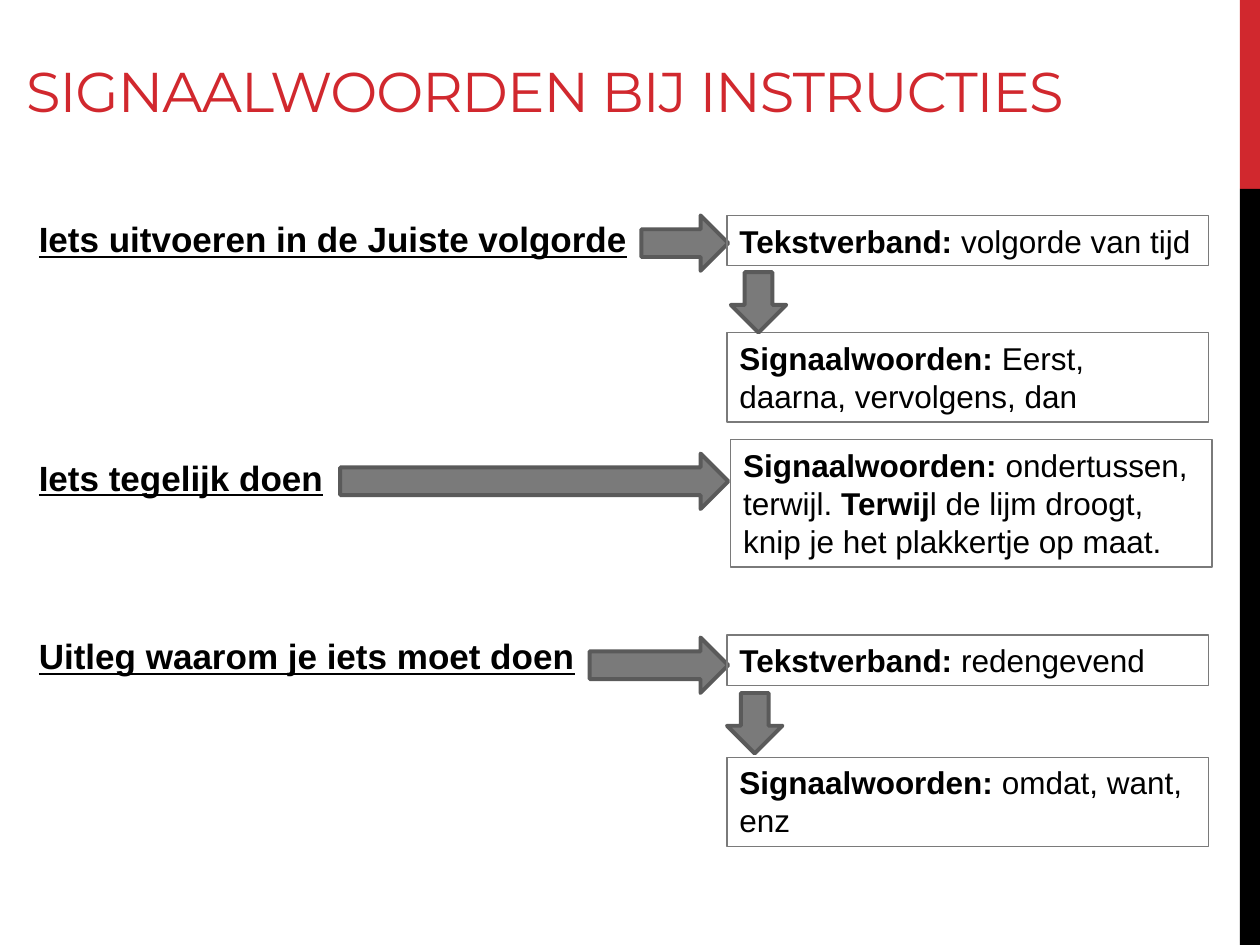
from dataclasses import dataclass

from pptx import Presentation
from pptx.dml.color import RGBColor
from pptx.enum import shapes, text
from pptx.util import Inches, Pt


@dataclass(frozen=True)
class Theme:
    red: RGBColor = RGBColor(0xD1, 0x28, 0x2E)
    black: RGBColor = RGBColor(0, 0, 0)
    gray: RGBColor = RGBColor(0x7A, 0x7A, 0x7A)
    outline: RGBColor = RGBColor(0x5A, 0x5A, 0x5A)
    title_font: str = "Montserrat"
    body_font: str = "Arial"
    title_size: Pt = Pt(32)
    goal_size: Pt = Pt(20)
    card_size: Pt = Pt(18)


THEME = Theme()
SHAPE = shapes.MSO_SHAPE
GOAL_LEFT = 0.21
CARD_LEFT, CARD_WIDTH = 5.77, 3.82
ARROW_THICKNESS, DOWN_LENGTH = 0.44, 0.48


def inches(box):
    return [Inches(length) for length in box]


def style(font, face, size, color):
    font.name, font.size = face, size
    font.color.rgb = color


def add_shape(slide, kind, box, fill=None, line=None, line_width=0.75):
    shape = slide.shapes.add_shape(kind, *inches(box))
    shape.shadow.inherit = False
    if fill is None:
        shape.fill.background()
    else:
        shape.fill.solid()
        shape.fill.fore_color.rgb = fill
    if line is None:
        shape.line.fill.background()
    else:
        shape.line.color.rgb = line
        shape.line.width = Pt(line_width)
    return shape


def add_side_bar(slide, box):
    left, top, width, height = box
    accent = height / 5
    add_shape(slide, SHAPE.RECTANGLE, (left, top, width, accent), THEME.red)
    add_shape(slide, SHAPE.RECTANGLE, (left, top + accent, width, height - accent), THEME.black)


def add_title(slide, box, wording):
    frame = slide.shapes.add_textbox(*inches(box)).text_frame
    frame.word_wrap = True
    frame.vertical_anchor = text.MSO_ANCHOR.BOTTOM
    paragraph = frame.paragraphs[0]
    run = paragraph.add_run()
    run.text = wording
    run.font._element.set("spc", "-60")
    style(paragraph.font, THEME.title_font, THEME.title_size, THEME.red)


def add_goal(slide, box, wording):
    frame = slide.shapes.add_textbox(*inches(box)).text_frame
    frame.word_wrap = True
    paragraph = frame.paragraphs[0]
    paragraph.text = wording
    style(paragraph.font, THEME.body_font, THEME.goal_size, THEME.black)
    paragraph.font.bold = paragraph.font.underline = True


def add_arrow(slide, box, rotation=0):
    arrow = add_shape(slide, SHAPE.RIGHT_ARROW, box, THEME.gray, THEME.outline, 2.25)
    arrow.rotation = rotation


def add_card(slide, box, parts):
    card = add_shape(slide, SHAPE.RECTANGLE, box, line=THEME.gray)
    frame = card.text_frame
    frame.word_wrap = True
    frame.vertical_anchor = text.MSO_ANCHOR.TOP
    paragraph = frame.paragraphs[0]
    paragraph.alignment = text.PP_ALIGN.LEFT
    style(paragraph.font, THEME.body_font, THEME.card_size, THEME.black)
    for index, wording in enumerate(parts):
        run = paragraph.add_run()
        run.text = wording
        run.font.bold = index % 2 == 0


def add_topic(slide, goal, goal_top, arrow_left, arrow_top, cards, down=None):
    add_goal(slide, (GOAL_LEFT, goal_top, CARD_LEFT - GOAL_LEFT, 0.43), goal)
    add_arrow(slide, (arrow_left, arrow_top, CARD_LEFT + 0.01 - arrow_left, ARROW_THICKNESS))
    for left, top, height, parts in cards:
        add_card(slide, (left, top, CARD_WIDTH, height), parts)
    if down:
        add_arrow(slide, (*down, DOWN_LENGTH, ARROW_THICKNESS), 90)


def main():
    deck = Presentation()
    deck.slide_width, deck.slide_height = Inches(10), Inches(7.5)
    slide = deck.slides.add_slide(deck.slide_layouts[6])
    add_side_bar(slide, (9.84, 0, 0.16, 7.5))
    add_title(slide, (0.11, 0.17, 9.76, 0.86), "SIGNAALWOORDEN BIJ INSTRUCTIES")

    relation, signals = "Tekstverband: ", "Signaalwoorden: "
    add_topic(slide, "Iets uitvoeren in de Juiste volgorde", 1.68, 5.09, 1.71, [
        (CARD_LEFT, 1.71, 0.4, (relation, "volgorde van tijd")),
        (CARD_LEFT, 2.64, 0.71, (signals, "Eerst, daarna, vervolgens, dan")),
    ], down=(5.78, 2.18))
    add_topic(slide, "Iets tegelijk doen", 3.57, 2.7, 3.6, [
        (5.8, 3.49, 1.01, (signals, "ondertussen, terwijl. ", "Terwij",
                           "l de lijm droogt, knip je het plakkertje op maat.")),
    ])
    add_topic(slide, "Uitleg waarom je iets moet doen", 4.99, 4.68, 5.06, [
        (CARD_LEFT, 5.04, 0.4, (relation, "redengevend")),
        (CARD_LEFT, 6.01, 0.71, (signals, "omdat, want, enz")),
    ], down=(5.75, 5.52))
    deck.save("out.pptx")


if __name__ == "__main__":
    main()
